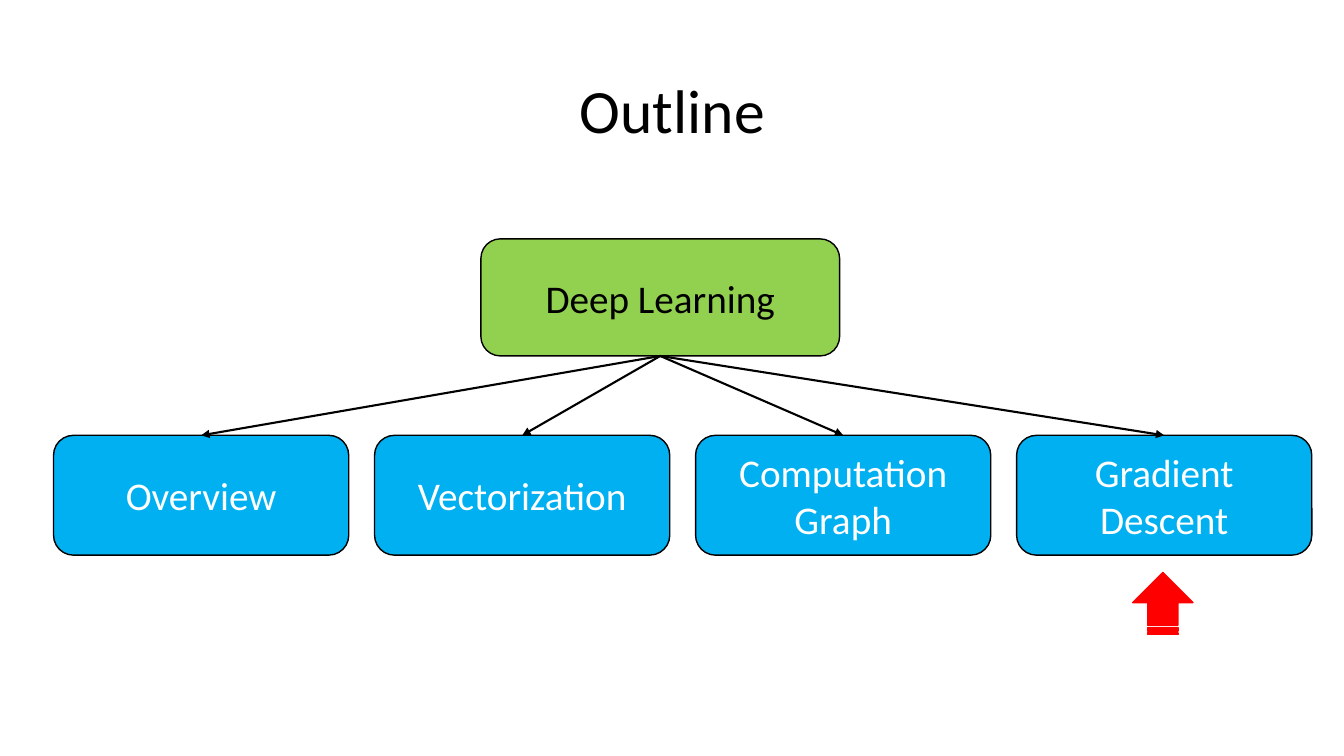
from dataclasses import dataclass

from pptx import Presentation
from pptx.dml.color import RGBColor
from pptx.enum.shapes import MSO_CONNECTOR as Connector, MSO_SHAPE as Preset
from pptx.enum.text import MSO_ANCHOR as Anchor, PP_ALIGN as Align
from pptx.oxml.ns import qn
from pptx.util import Cm, Pt
from lxml.etree import SubElement


@dataclass(frozen=True)
class Theme:
    font: str = "Calibri"
    title_size: int = 44
    box_size: int = 28
    outline_width: float = 1
    branch_width: float = 1.5
    black: RGBColor = RGBColor(0, 0, 0)
    white: RGBColor = RGBColor(255, 255, 255)
    green: RGBColor = RGBColor(0x92, 0xD0, 0x50)
    blue: RGBColor = RGBColor(0x00, 0xB0, 0xF0)
    red: RGBColor = RGBColor(255, 0, 0)


THEME = Theme()
TOPICS = ["Overview", "Vectorization", "Computation Graph", "Gradient Descent"]
TOPIC_LEFT, TOPIC_TOP, TOPIC_PITCH = 1.35, 10.97, 8.09
TOPIC_WIDTH, TOPIC_HEIGHT = 7.44, 3.02
# Connection sites of a rectangle
TOP_SITE, BOTTOM_SITE = 0, 2


def set_text(shape, text, size, color):
    """Write one centred paragraph in the middle of a shape."""
    frame = shape.text_frame
    frame.word_wrap = True
    frame.vertical_anchor = Anchor.MIDDLE
    frame.text = text
    paragraph = frame.paragraphs[0]
    paragraph.alignment = Align.CENTER
    font = paragraph.runs[0].font
    font.name = THEME.font
    font.size = Pt(size)
    font.color.rgb = color
    return paragraph


def add_title(slide, text):
    title = slide.shapes.add_textbox(Cm(2.34), Cm(1.02), Cm(29.21), Cm(3.68))
    set_text(title, text, THEME.title_size, THEME.black).line_spacing = 0.9


def add_filled_shape(slide, preset, left, top, width, height, fill, outline):
    shape = slide.shapes.add_shape(preset, Cm(left), Cm(top), Cm(width), Cm(height))
    shape.shadow.inherit = False
    shape.fill.solid()
    shape.fill.fore_color.rgb = fill
    shape.line.color.rgb = outline
    shape.line.width = Pt(THEME.outline_width)
    return shape


def add_box(slide, text, left, top, width, height, fill, text_color):
    box = add_filled_shape(slide, Preset.ROUNDED_RECTANGLE, left, top, width, height,
                           fill, THEME.black)
    set_text(box, text, THEME.box_size, text_color)
    return box


def add_branch(slide, parent, child):
    """Draw an arrow from the bottom of the parent to the top of the child."""
    branch = slide.shapes.add_connector(Connector.STRAIGHT, 0, 0, 0, 0)
    branch.begin_connect(parent, BOTTOM_SITE)
    branch.end_connect(child, TOP_SITE)
    branch.line.color.rgb = THEME.black
    branch.line.width = Pt(THEME.branch_width)
    SubElement(branch.line._get_or_add_ln(), qn("a:tailEnd"), type="triangle")
    SubElement(branch._element.spPr, qn("a:effectLst"))


def add_marker(slide):
    """Point up at the current topic."""
    marker = add_filled_shape(slide, Preset.STRIPED_RIGHT_ARROW, 28.52, 14.45, 1.57, 1.52,
                              THEME.red, THEME.red)
    marker.rotation = 270


def main():
    presentation = Presentation()
    presentation.slide_width = Cm(33.87)
    presentation.slide_height = Cm(19.05)
    slide = presentation.slides.add_slide(presentation.slide_layouts[6])

    # Title and root of the tree
    add_title(slide, "Outline")
    root = add_box(slide, "Deep Learning", 12.12, 6.02, 9.04, 2.95,
                   THEME.green, THEME.black)

    # Evenly spaced topics, each joined to the root
    for index, topic in enumerate(TOPICS):
        box = add_box(slide, topic, TOPIC_LEFT + index * TOPIC_PITCH, TOPIC_TOP,
                      TOPIC_WIDTH, TOPIC_HEIGHT, THEME.blue, THEME.white)
        add_branch(slide, root, box)

    # Current topic
    add_marker(slide)

    presentation.save("out.pptx")


if __name__ == "__main__":
    main()
